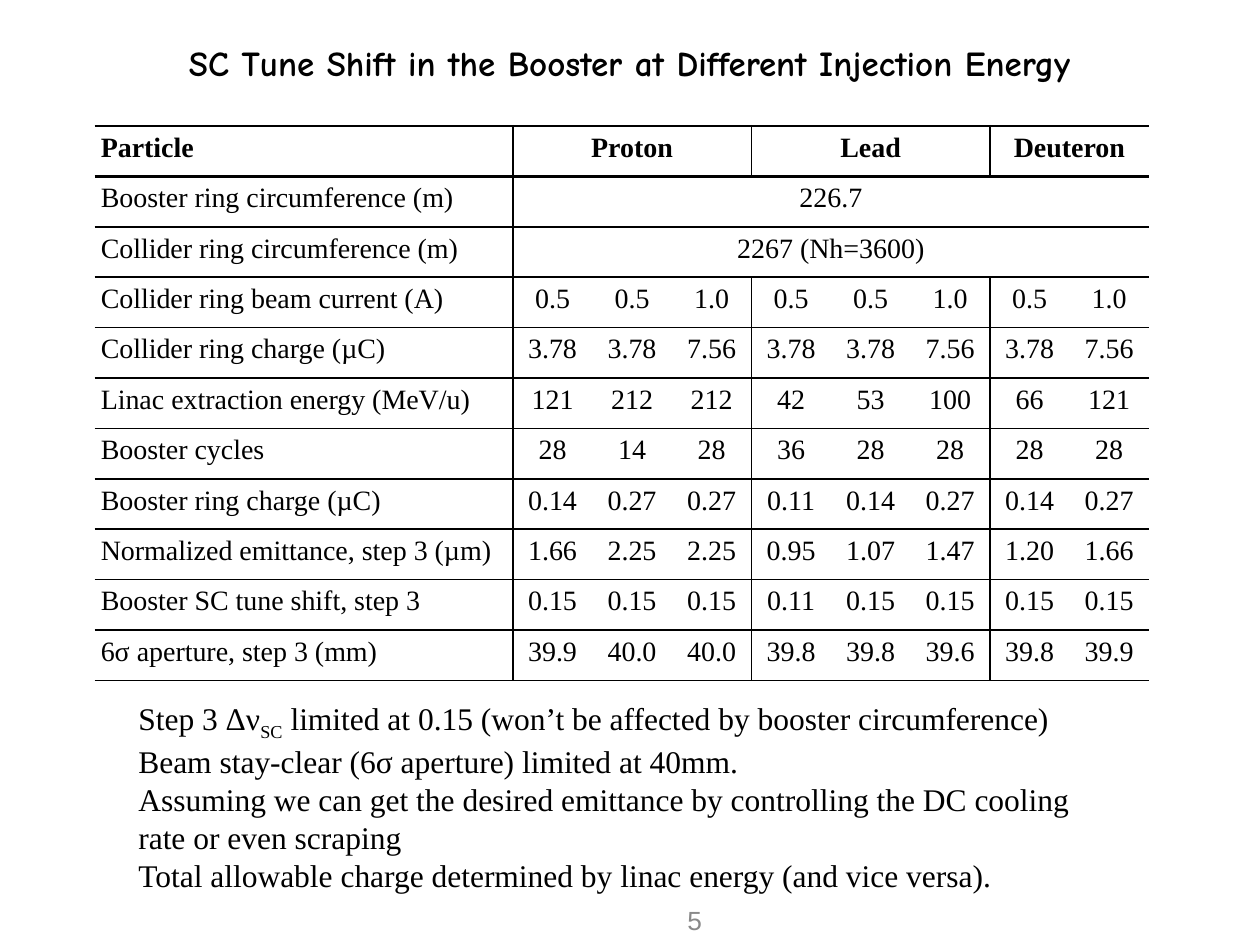
from pptx import Presentation
from pptx.dml.color import RGBColor
from pptx.enum.text import MSO_ANCHOR, MSO_AUTO_SIZE, PP_ALIGN
from pptx.oxml.ns import qn
from pptx.util import Inches, Pt
from lxml import etree

LEFT, MID, RIGHT = PP_ALIGN.LEFT, PP_ALIGN.CENTER, PP_ALIGN.RIGHT
TOP, CENTER = MSO_ANCHOR.TOP, MSO_ANCHOR.MIDDLE
GROW = MSO_AUTO_SIZE.SHAPE_TO_FIT_TEXT
BLACK = RGBColor(0x00, 0x00, 0x00)
GREY = RGBColor(0x89, 0x89, 0x89)
SERIF = "Times New Roman"
TABLE = (0.75, 1, 8.37, 4.4)
LABEL = 3.32
EDGES = (1, 4, 7)
THICK, THIN = 1.5, 1
THICK_LINES = 4

HEAD = [("Particle", 1), ("Proton", 3), ("Lead", 3), ("Deuteron", 2)]
WIDE = [
    ("Booster ring circumference (m)", "226.7"),
    ("Collider ring circumference (m)", "2267 (Nh=3600)"),
]
DATA = [
    ("Collider ring beam current (A)", "0.5 0.5 1.0 0.5 0.5 1.0 0.5 1.0"),
    ("Collider ring charge (µC)", "3.78 3.78 7.56 3.78 3.78 7.56 3.78 7.56"),
    ("Linac extraction energy (MeV/u)", "121 212 212 42 53 100 66 121"),
    ("Booster cycles", "28 14 28 36 28 28 28 28"),
    ("Booster ring charge (µC)", "0.14 0.27 0.27 0.11 0.14 0.27 0.14 0.27"),
    ("Normalized emittance, step 3 (µm)",
     "1.66 2.25 2.25 0.95 1.07 1.47 1.20 1.66"),
    ("Booster SC tune shift, step 3",
     "0.15 0.15 0.15 0.11 0.15 0.15 0.15 0.15"),
    ("6σ aperture, step 3 (mm)",
     "39.9 40.0 40.0 39.8 39.8 39.6 39.8 39.9"),
]
NOTES = [
    [("Step 3 Δν", 0), ("SC", -25),
     (" limited at 0.15 (won’t be affected by booster circumference)", 0)],
    [("Beam stay-clear (6σ aperture) limited at 40mm.", 0)],
    [("Assuming we can get the desired emittance by controlling the DC "
      "cooling rate or even scraping", 0)],
    [("Total allowable charge determined by linac energy "
      "(and vice versa).", 0)],
]


def add_run(para, text, size, face=SERIF, color=BLACK, bold=False, base=0):
    run = para.add_run()
    run.text = text
    font = run.font
    font.size, font.name, font.bold = Pt(size), face, bold
    font.color.rgb = color
    if base:
        run._r.get_or_add_rPr().set("baseline", str(base * 1000))


def add_text(slide, box, paras, align, anchor, **style):
    shape = slide.shapes.add_textbox(*map(Inches, box))
    frame = shape.text_frame
    frame.word_wrap = True
    frame.vertical_anchor = anchor
    for i, runs in enumerate(paras):
        para = frame.add_paragraph() if i else frame.paragraphs[0]
        para.alignment = align
        for text, base in runs:
            add_run(para, text, base=base, **style)
    return frame


def add_lines(cell, widths):
    props = cell._tc.get_or_add_tcPr()
    for side, width in zip("LRTB", widths):
        line = etree.SubElement(props, qn("a:ln" + side), w=str(Pt(width)))
        if width:
            fill = etree.SubElement(line, qn("a:solidFill"))
            etree.SubElement(fill, qn("a:srgbClr"), val=str(BLACK))
        else:
            etree.SubElement(line, qn("a:noFill"))
    cell.fill.background()


def fill_cell(cell, text, align, bold):
    cell.margin_left = cell.margin_right = Inches(0.05)
    cell.margin_top = cell.margin_bottom = Inches(0.05)
    para = cell.text_frame.paragraphs[0]
    para.alignment = align
    para.space_before = para.space_after = Pt(3)
    add_run(para, text, 16, bold=bold)


def fill_row(table, row, groups):
    rules = [THICK if n < THICK_LINES else THIN for n in (row, row + 1)]
    col = 0
    for text, span in groups:
        end = col + span
        cell = table.cell(row, col)
        if span > 1:
            cell.merge(table.cell(row, end - 1))
        fill_cell(cell, text, MID if col else LEFT, row == 0)
        sides = [THIN if n in EDGES else 0 for n in (col, end)]
        add_lines(cell, sides + rules)
        for n in range(col + 1, end):
            add_lines(table.cell(row, n), [0, sides[1] if n == end - 1 else 0] + rules)
        col = end


def add_grid(slide):
    rows = [HEAD]
    rows += [[(name, 1), (value, 8)] for name, value in WIDE]
    rows += [[(text, 1) for text in [name] + values.split()]
             for name, values in DATA]
    count = sum(span for _, span in HEAD)
    table = slide.shapes.add_table(len(rows), count, *map(Inches, TABLE)).table
    table.first_row = table.horz_banding = False
    for i, col in enumerate(table.columns):
        col.width = Inches((TABLE[2] - LABEL) / (count - 1) if i else LABEL)
    for i, groups in enumerate(rows):
        table.rows[i].height = Inches(TABLE[3] / len(rows))
        fill_row(table, i, groups)


def main():
    deck = Presentation()
    deck.slide_width, deck.slide_height = Inches(10), Inches(7.5)
    slide = deck.slides.add_slide(deck.slide_layouts[6])
    title = "SC Tune Shift in the Booster at Different Injection Energy"
    add_text(slide, (0.75, 0, 8.5, 1), [[(title, 0)]], MID, CENTER,
             size=20, face="Comic Neue", bold=True)
    add_text(slide, (4.92, 7.1, 0.75, 0.4), [[("5", 0)]], RIGHT, CENTER,
             size=15, face="Arial", color=GREY)
    add_grid(slide)
    notes = add_text(slide, (1, 5.5, 7.83, 1.62), NOTES, LEFT, TOP, size=18)
    notes.auto_size = GROW
    deck.save("out.pptx")


if __name__ == "__main__":
    main()
